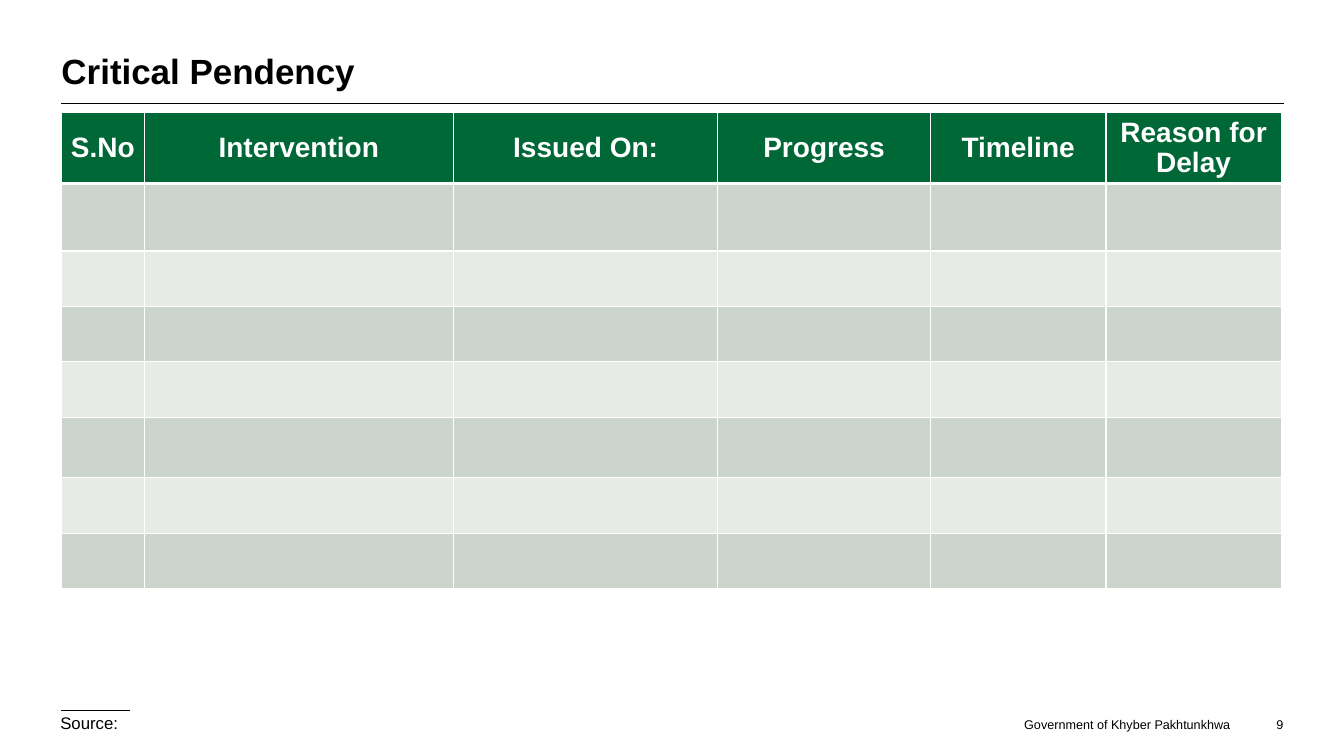
"""Build the critical pendency table slide."""
from lxml import etree
from pptx import Presentation
from pptx.dml.color import RGBColor
from pptx.enum.shapes import MSO_CONNECTOR
from pptx.enum.text import MSO_ANCHOR as Anchor, PP_ALIGN as Align
from pptx.oxml.ns import qn
from pptx.util import Inches, Pt

BLACK = RGBColor(0x00, 0x00, 0x00)
WHITE = RGBColor(0xFF, 0xFF, 0xFF)
GREEN = RGBColor(0x00, 0x68, 0x37)
DARK_BAND = RGBColor(0xCC, 0xD4, 0xCE)
LIGHT_BAND = RGBColor(0xE7, 0xEB, 0xE8)

HEADINGS = ["S.No", "Intervention", "Issued On:", "Progress", "Timeline", "Reason for Delay"]
COLUMN_WIDTHS = [0.82, 3.07, 2.62, 2.11, 1.74, 1.74]
ROW_HEIGHTS = [0.7, 0.67, 0.55, 0.55, 0.55, 0.6, 0.55, 0.55]
LEFT = 0.61


def write(frame, text, size, color, align, anchor, margins, bold=False):
    frame.text = text
    frame.vertical_anchor = anchor
    frame.margin_left, frame.margin_top, frame.margin_right, frame.margin_bottom = map(Inches, margins)
    para = frame.paragraphs[0]
    para.alignment = align
    para.font.name = "Arial"
    para.font.size = Pt(size)
    para.font.bold = bold
    para.font.color.rgb = color


def add_border(cell, side, width):
    line = etree.SubElement(cell._tc.get_or_add_tcPr(), qn(f"a:ln{side}"), w=str(Pt(width)))
    fill = etree.SubElement(line, qn("a:solidFill"))
    etree.SubElement(fill, qn("a:srgbClr"), val=str(WHITE))


deck = Presentation()
deck.slide_width, deck.slide_height = Inches(13.33), Inches(7.5)
page = deck.slides.add_slide(deck.slide_layouts[5])

title = page.shapes.title
title.left, title.top, title.width, title.height = map(Inches, (LEFT, 0.11, 11.11, 0.8))
write(title.text_frame, "Critical Pendency", 25, BLACK, Align.LEFT, Anchor.BOTTOM, (0, 0, 0, 0), True)

for right, y in [(12.73, 1.03), (1.29, 7.05)]:
    rule = page.shapes.add_connector(
        MSO_CONNECTOR.STRAIGHT, Inches(LEFT), Inches(y), Inches(right), Inches(y))
    rule.line.color.rgb = BLACK
    rule.line.width = Pt(0.5)
    etree.SubElement(rule._element.spPr, qn("a:effectLst"))

table = page.shapes.add_table(
    len(ROW_HEIGHTS), len(HEADINGS), Inches(LEFT), Inches(1.12),
    Inches(sum(COLUMN_WIDTHS)), Inches(sum(ROW_HEIGHTS))).table
for column, width in zip(table.columns, COLUMN_WIDTHS):
    column.width = Inches(width)
for index, (row, height) in enumerate(zip(table.rows, ROW_HEIGHTS)):
    row.height = Inches(height)
    for cell, heading in zip(row.cells, HEADINGS):
        is_header = index == 0
        for side in "LRTB":
            thick = (is_header and side == "B") or (index == 1 and side == "T")
            add_border(cell, side, 3 if thick else 1)
        cell.fill.solid()
        if is_header:
            cell.fill.fore_color.rgb = GREEN
            write(cell.text_frame, heading, 20, WHITE, Align.CENTER, Anchor.MIDDLE,
                  (0.01, 0.01, 0.01, 0), True)
            cell.vertical_anchor = Anchor.MIDDLE
            cell.margin_left = cell.margin_top = cell.margin_right = Inches(0.01)
            cell.margin_bottom = 0
            cell.text_frame.paragraphs[0].line_spacing = 0.95
        else:
            cell.fill.fore_color.rgb = DARK_BAND if index % 2 else LIGHT_BAND

FOOTERS = [
    ("Source:", (0.5, 7.02, 7.6, 0.3), 12, Align.LEFT, Anchor.TOP, (0.1, 0.05, 0.1, 0.05), True),
    ("Government of Khyber Pakhtunkhwa", (10.15, 7.11, 2.06, 0.15), 9, Align.CENTER,
     Anchor.MIDDLE, (0, 0, 0, 0), False),
    ("9", (12.37, 7.11, 0.36, 0.15), 9, Align.RIGHT, Anchor.BOTTOM, (0, 0, 0, 0), True),
]
for text, place, size, align, anchor, margins, wrap in FOOTERS:
    box = page.shapes.add_textbox(*map(Inches, place))
    box.text_frame.word_wrap = wrap
    write(box.text_frame, text, size, BLACK, align, anchor, margins)

deck.save("out.pptx")
